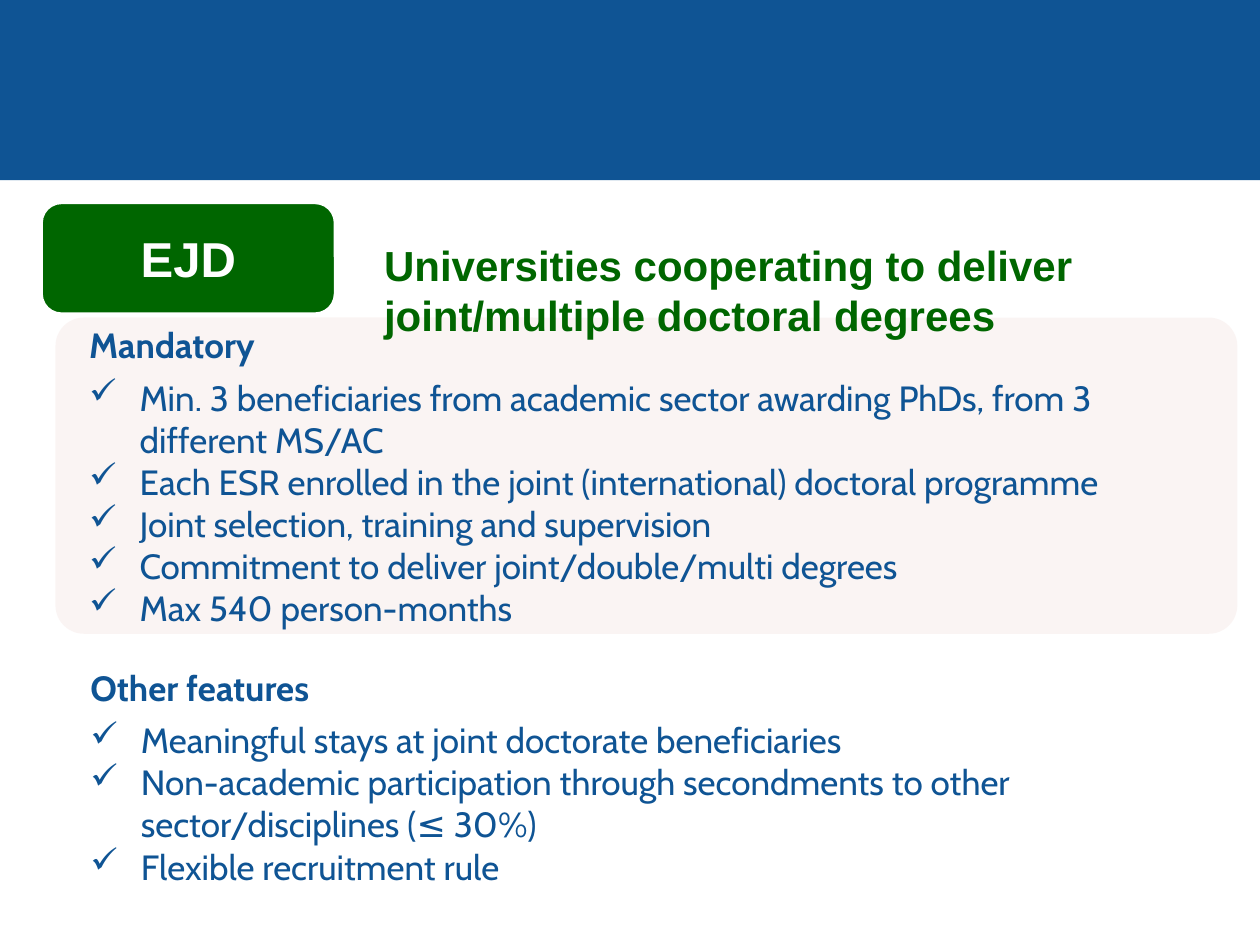
"""Build the EJD slide with its mandatory and other features."""
from lxml.etree import SubElement
from pptx import Presentation
from pptx.dml.color import RGBColor
from pptx.enum.shapes import MSO_SHAPE
from pptx.enum.text import MSO_ANCHOR, PP_ALIGN
from pptx.oxml.ns import qn
from pptx.util import Inches, Pt

COLORS = {
    "blue": "0F5494",
    "green": "006600",
    "pink": "F2DCDB",
    "white": "FFFFFF",
}
SECTIONS = [
    ("Mandatory", (0.61, 2.52, 9.11, 2.54), [
        "Min. 3 beneficiaries from academic sector awarding PhDs, from 3 different MS/AC",
        "Each ESR enrolled in the joint (international) doctoral programme",
        "Joint selection, training and supervision",
        "Commitment to deliver joint/double/multi degrees",
        "Max 540 person-months",
    ]),
    ("Other features", (0.62, 5.24, 9.1, 1.87), [
        "Meaningful stays at joint doctorate beneficiaries",
        "Non-academic participation through secondments to other sector/disciplines (≤ 30%)",
        "Flexible recruitment rule",
    ]),
]


def add_panel(page, kind, place, color, corner=None):
    panel = page.shapes.add_shape(kind, *map(Inches, place))
    panel.shadow.inherit = False
    panel.fill.solid()
    panel.fill.fore_color.rgb = RGBColor.from_string(COLORS[color])
    panel.line.fill.background()
    if corner is not None:
        panel.adjustments[0] = corner
    return panel


def format_text(para, name, size, color, bold):
    for span in para.runs:
        span.font.name = name
        span.font.size = Pt(size)
        span.font.bold = bold
        span.font.color.rgb = RGBColor.from_string(COLORS[color])


deck = Presentation()
deck.slide_width, deck.slide_height = Inches(10), Inches(7.5)
page = deck.slides.add_slide(deck.slide_layouts[6])

add_panel(page, MSO_SHAPE.RECTANGLE, (0, 0, 10, 1.43), "blue")
mandatory_panel = add_panel(
    page, MSO_SHAPE.ROUNDED_RECTANGLE, (0.44, 2.52, 9.38, 2.51), "pink", 0.09)
panel_color = mandatory_panel.fill._xPr.find(qn("a:solidFill"))[0]
SubElement(panel_color, qn("a:alpha"), val="31000")

for heading, place, items in SECTIONS:
    box = page.shapes.add_textbox(*map(Inches, place))
    frame = box.text_frame
    frame.word_wrap = True
    frame.text = heading
    frame.paragraphs[0].space_after = Pt(6)
    format_text(frame.paragraphs[0], "Cabin", 20, "blue", True)
    for item in items:
        para = frame.add_paragraph()
        para.text = item
        properties = para._p.get_or_add_pPr()
        properties.set("marL", str(Inches(0.4)))
        properties.set("indent", str(-Inches(0.4)))
        SubElement(properties, qn("a:buChar"), char="✓")
        format_text(para, "Cabin", 20, "blue", False)

badge = add_panel(
    page, MSO_SHAPE.ROUNDED_RECTANGLE, (0.33, 1.61, 2.33, 0.88), "green", 0.18)
badge.line.color.rgb = RGBColor.from_string(COLORS["white"])
badge.line.width = Pt(1.5)
badge.text_frame.word_wrap = False
badge.text_frame.vertical_anchor = MSO_ANCHOR.MIDDLE
badge.text_frame.text = "EJD"
badge.text_frame.paragraphs[0].alignment = PP_ALIGN.CENTER
format_text(badge.text_frame.paragraphs[0], "Arial", 28, "white", True)

title = page.shapes.add_textbox(Inches(2.95), Inches(1.85), Inches(6.87), Inches(0.91))
title.text_frame.word_wrap = True
title.text_frame.text = "Universities cooperating to deliver joint/multiple doctoral degrees"
format_text(title.text_frame.paragraphs[0], "Arial", 24, "green", True)

deck.save("out.pptx")
